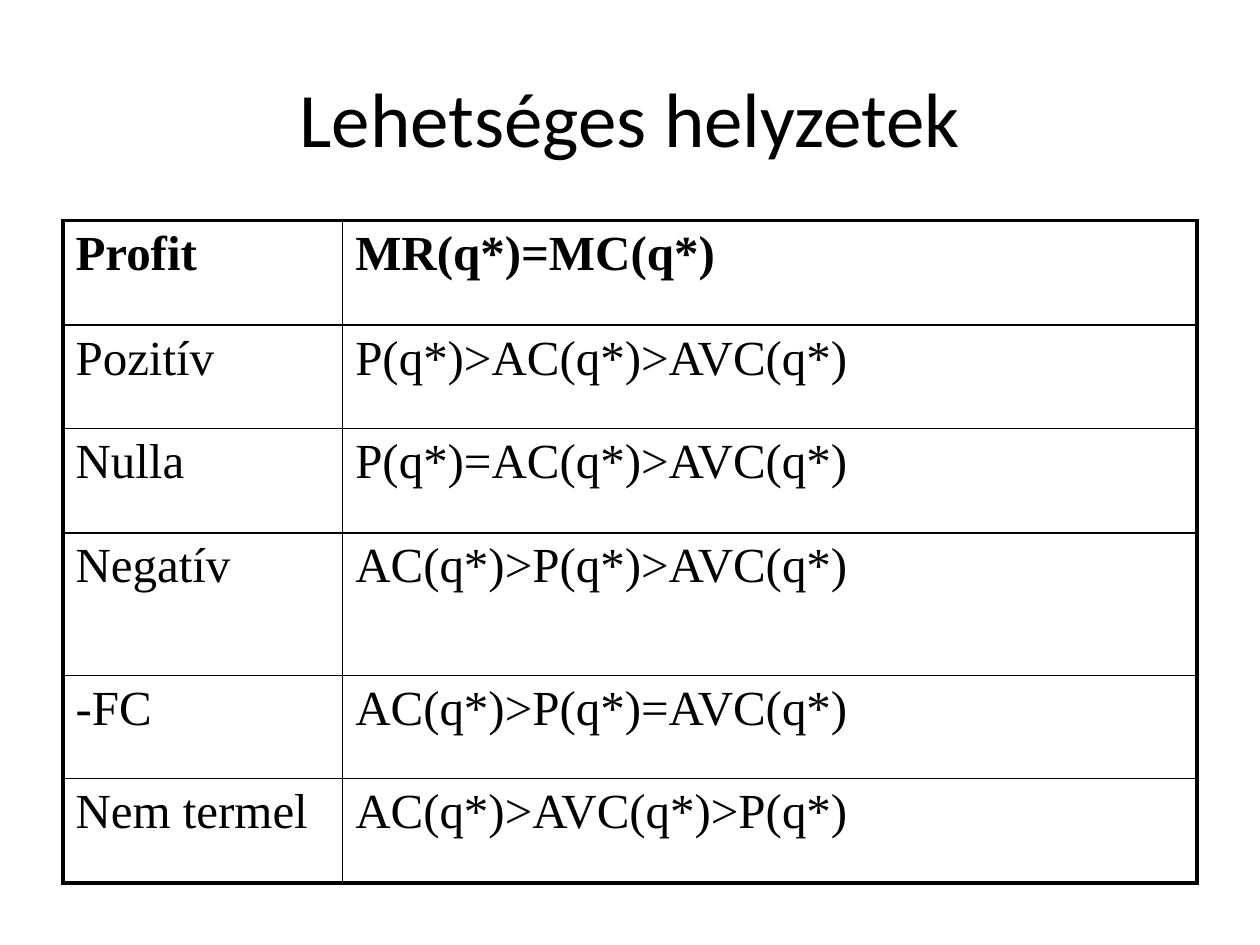
import pptx
import pptx.dml.color
import pptx.enum.text
import pptx.oxml
import pptx.oxml.ns
import pptx.util
from pptx.util import Inches

BLACK = "000000"
THIN, THICK = 1, 2.25
COL_WIDTHS = [2.22, 6.78]
ROW_HEIGHTS = [0.83, 0.82, 0.83, 1.13, 0.82, 0.83]
ROWS = [
    ("Profit", "MR(q*)=MC(q*)"),
    ("Pozitív", "P(q*)>AC(q*)>AVC(q*)"),
    ("Nulla", "P(q*)=AC(q*)>AVC(q*)"),
    ("Negatív", "AC(q*)>P(q*)>AVC(q*)"),
    ("-FC", "AC(q*)>P(q*)=AVC(q*)"),
    ("Nem termel", "AC(q*)>AVC(q*)>P(q*)"),
]


def rgb(color):
    """Turn a hex string into a colour."""
    return pptx.dml.color.RGBColor.from_string(color)


def add_run(p, text, font, size, bold=False):
    """Add a formatted run to a paragraph."""
    r = p.add_run()
    r.text = text
    r.font.name = font
    r.font.size = pptx.util.Pt(size)
    r.font.bold = bold
    r.font.color.rgb = rgb(BLACK)


def set_borders(cell, widths):
    """Draw the left, right, top and bottom borders of a cell."""
    tc_pr = cell._tc.get_or_add_tcPr()
    for i, (side, width) in enumerate(zip("LRTB", widths)):
        tc_pr.insert(i, pptx.oxml.parse_xml(
            f'<a:ln{side} {pptx.oxml.ns.nsdecls("a")} w="{pptx.util.Pt(width)}">'
            f'<a:solidFill><a:srgbClr val="{BLACK}"/></a:solidFill></a:ln{side}>'))


def add_title(s, text):
    """Place and fill the title placeholder."""
    sp = s.shapes.title
    sp.left, sp.top, sp.width, sp.height = map(Inches, (0.5, 0.3, 9, 1.25))
    tf = sp.text_frame
    tf.vertical_anchor = pptx.enum.text.MSO_ANCHOR.MIDDLE
    p = tf.paragraphs[0]
    p.alignment = pptx.enum.text.PP_ALIGN.CENTER
    add_run(p, text, "Calibri", 44)


def add_profit_table(s):
    """Add the table of profit cases with a thick outer frame."""
    last_row, last_col = len(ROWS) - 1, len(COL_WIDTHS) - 1
    table = s.shapes.add_table(
        len(ROWS), len(COL_WIDTHS), Inches(0.5), Inches(1.75),
        Inches(sum(COL_WIDTHS)), Inches(sum(ROW_HEIGHTS))).table
    table.first_row = table.horz_banding = False
    for column, width in zip(table.columns, COL_WIDTHS):
        column.width = Inches(width)
    for row, height in zip(table.rows, ROW_HEIGHTS):
        row.height = Inches(height)
    for i, texts in enumerate(ROWS):
        for j, text in enumerate(texts):
            cell = table.cell(i, j)
            cell.fill.background()
            outer = (j == 0, j == last_col, i == 0, i == last_row)
            set_borders(cell, [THICK if edge else THIN for edge in outer])
            add_run(cell.text_frame.paragraphs[0], text, "Times New Roman", 28, i == 0)


def main():
    """Build and save the slide."""
    prs = pptx.Presentation()
    prs.slide_width, prs.slide_height = Inches(10), Inches(7.5)
    s = prs.slides.add_slide(prs.slide_layouts[5])
    add_title(s, "Lehetséges helyzetek")
    add_profit_table(s)
    prs.save("out.pptx")


if __name__ == "__main__":
    main()
